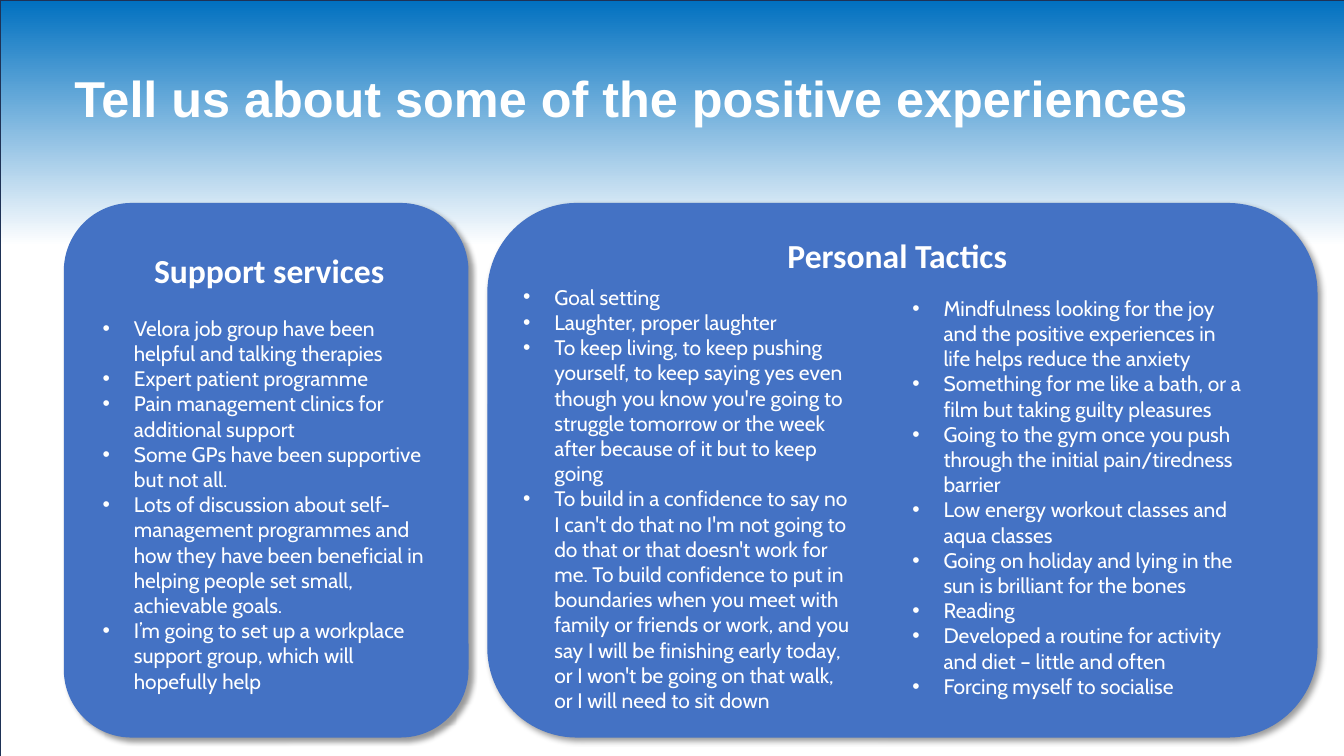
from dataclasses import dataclass

from lxml.etree import SubElement as Sub
from pptx import Presentation
from pptx.dml.color import RGBColor as Rgb
from pptx.enum.shapes import MSO_SHAPE as Geo
from pptx.enum.text import MSO_ANCHOR as Anchor, MSO_AUTO_SIZE as Fit, PP_ALIGN as Align
from pptx.oxml.ns import qn
from pptx.util import Inches, Pt


@dataclass(frozen=True)
class Theme:
    """Colours, fonts and type sizes of the slide."""
    sky: Rgb = Rgb.from_string("0070C0")
    white: Rgb = Rgb.from_string("FFFFFF")
    edge: Rgb = Rgb.from_string("1E3256")
    card: Rgb = Rgb.from_string("4472C4")
    shade: str = "000000"
    title: tuple = ("Arial", 36, True)
    head: tuple = ("Calibri", 24, True)
    body: tuple = ("Cabin", 15, False)


LOOK = Theme()
INDENT = Inches(0.31)
COL = 3.5

SUPPORT = [
    "Velora job group have been helpful and talking therapies",
    "Expert patient programme",
    "Pain management clinics for additional support",
    "Some GPs have been supportive but not all.",
    "Lots of discussion about self-management programmes and how they have been "
    "beneficial in helping people set small, achievable goals.",
    "I’m going to set up a workplace support group, which will hopefully help",
]
MINDSET = [
    "Goal setting",
    "Laughter, proper laughter",
    "To keep living, to keep pushing yourself, to keep saying yes even though you know "
    "you're going to struggle tomorrow or the week after because of it but to keep going",
    "To build in a confidence to say no I can't do that no I'm not going to do that or "
    "that doesn't work for me. To build confidence to put in boundaries when you meet "
    "with family or friends or work, and you say I will be finishing early today, or I "
    "won't be going on that walk, or I will need to sit down",
]
HABITS = [
    "Mindfulness looking for the joy and the positive experiences in life helps reduce "
    "the anxiety",
    "Something for me like a bath, or a film but taking guilty pleasures",
    "Going to the gym once you push through the initial pain/tiredness barrier",
    "Low energy workout classes and aqua classes",
    "Going on holiday and lying in the sun is brilliant for the bones",
    "Reading",
    "Developed a routine for activity and diet – little and often",
    "Forcing myself to socialise",
]


def assign(item, **values):
    """Set each named attribute on an item."""
    for name, value in values.items():
        setattr(item, name, value)


def frame(slide, box, **values):
    """Add a wrapping text box and return its text frame."""
    text = slide.shapes.add_textbox(*map(Inches, box)).text_frame
    assign(text, word_wrap=True, **values)
    return text


def write(text, words, style, **values):
    """Write one paragraph, using the empty first one if it is free."""
    first = text.paragraphs[0]
    para = text.add_paragraph() if first.runs else first
    run = para.add_run()
    run.text = words
    name, size, bold = style
    assign(run.font, name=name, size=Pt(size), bold=bold)
    run.font.color.rgb = LOOK.white
    assign(para, **values)
    return para


def bullets(text, items):
    """Write a bulleted list with hanging indents."""
    for item in items:
        props = write(text, item, LOOK.body)._p.get_or_add_pPr()
        props.set("marL", str(INDENT))
        props.set("indent", str(-INDENT))
        Sub(props, qn("a:buFont"), typeface="Arial")
        Sub(props, qn("a:buChar"), char="•")


def shape(slide, kind, box, line):
    """Add a shape with a thin outline and no inherited shadow."""
    item = slide.shapes.add_shape(kind, *map(Inches, box))
    item.shadow.inherit = False
    item.line.color.rgb = line
    item.line.width = Pt(1)
    return item


def backdrop(slide, box):
    """Fill the box with a gradient from sky to white."""
    fill = shape(slide, Geo.RECTANGLE, box, LOOK.edge).fill
    fill.gradient()
    fill.gradient_angle = 270
    for stop, (spot, colour) in zip(fill.gradient_stops, [(0, LOOK.sky), (0.31, LOOK.white)]):
        stop.position = spot
        stop.color.rgb = colour


def card(slide, box):
    """Draw a rounded card with a soft shadow."""
    item = shape(slide, Geo.ROUNDED_RECTANGLE, box, LOOK.card)
    item.fill.solid()
    item.fill.fore_color.rgb = LOOK.card
    effects = item._element.spPr.find(qn("a:effectLst"))
    shadow = Sub(effects, qn("a:outerShdw"), blurRad=str(Pt(4)), dist=str(Pt(3)),
                 dir="2700000", algn="tl", rotWithShape="0")
    colour = Sub(shadow, qn("a:srgbClr"), val=LOOK.shade)
    Sub(colour, qn("a:alpha"), val="40000")


def header(slide, box):
    """Write the slide title in the middle of the box."""
    text = frame(slide, box, vertical_anchor=Anchor.MIDDLE)
    write(text, "Tell us about some of the positive experiences", LOOK.title, line_spacing=0.9)


def support(slide, box):
    """Fill the box with a card holding a heading and one list."""
    left, top, _, _ = box
    card(slide, box)
    text = frame(slide, (left + 0.28, top + 0.41, COL, 4.54), auto_size=Fit.SHAPE_TO_FIT_TEXT)
    write(text, "Support services", LOOK.head, alignment=Align.CENTER, space_after=Pt(18))
    bullets(text, SUPPORT)


def tactics(slide, box):
    """Fill the box with a card holding a heading and two lists."""
    left, top, _, _ = box
    card(slide, box)
    text = frame(slide, (left + 2.31, top + 0.26, COL, 0.5), auto_size=Fit.SHAPE_TO_FIT_TEXT)
    write(text, "Personal Tactics", LOOK.head, alignment=Align.CENTER)
    for dx, dy, high, items in [(0.25, 0.48, 4.66, MINDSET), (4.11, 0.59, 4.41, HABITS)]:
        text = frame(slide, (left + dx, top + dy, COL, high),
                     margin_top=Inches(0.32), auto_size=Fit.SHAPE_TO_FIT_TEXT)
        bullets(text, items)


def main():
    """Build the slide and save it."""
    deck = Presentation()
    assign(deck, slide_width=Inches(13.33), slide_height=Inches(7.5))
    slide = deck.slides.add_slide(deck.slide_layouts[6])
    backdrop(slide, (0, 0, 13.69, 7.86))
    header(slide, (0.64, 0.28, 12.79, 1.45))
    support(slide, (0.64, 2.02, 4, 5.29))
    tactics(slide, (4.84, 2.02, 8.22, 5.29))
    deck.save("out.pptx")


if __name__ == "__main__":
    main()
